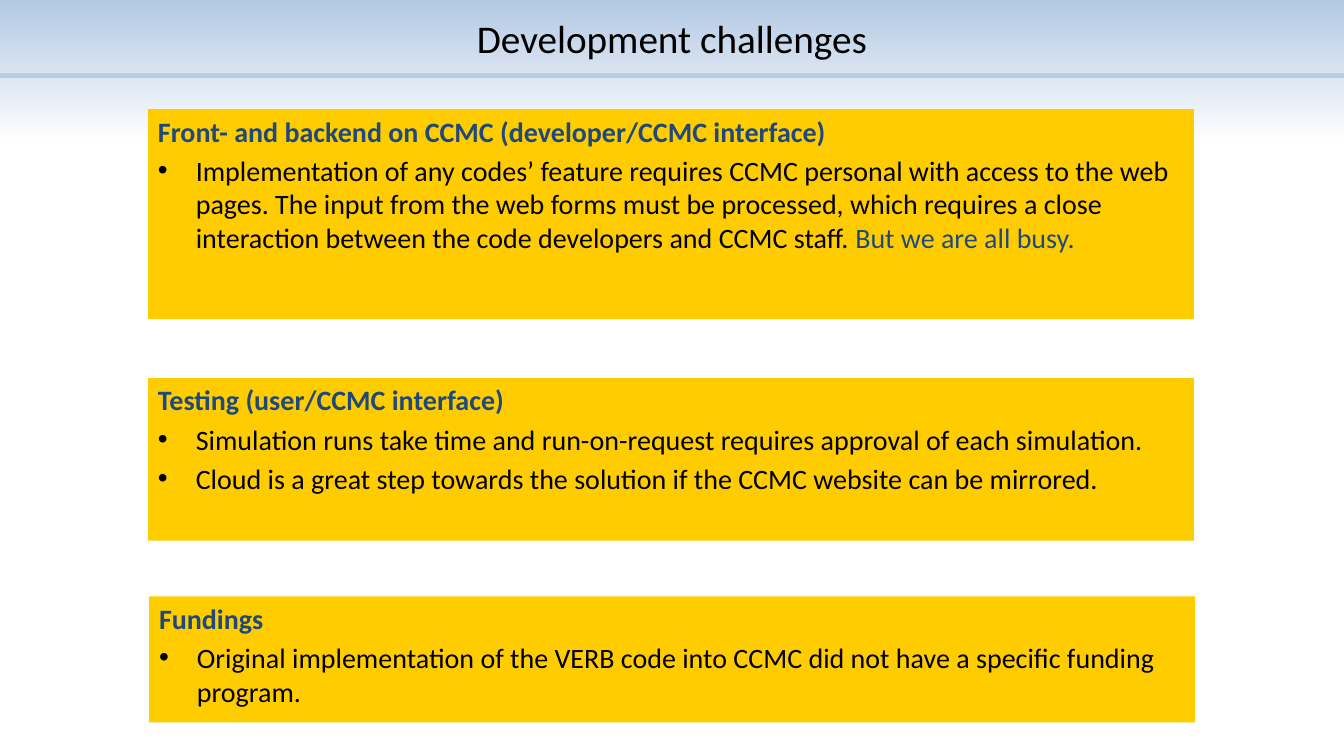
from lxml import etree
from pptx import Presentation
from pptx.dml.color import RGBColor
from pptx.enum.shapes import MSO_CONNECTOR, MSO_SHAPE
from pptx.enum.text import MSO_ANCHOR, PP_ALIGN
from pptx.oxml.ns import qn
from pptx.util import Pt

PX = 9525  # EMU per px, 96 px to the inch
STRAIGHT = MSO_CONNECTOR.STRAIGHT
RECTANGLE = MSO_SHAPE.RECTANGLE
MIDDLE, TOP = MSO_ANCHOR.MIDDLE, MSO_ANCHOR.TOP
CENTER, LEFT = PP_ALIGN.CENTER, PP_ALIGN.LEFT
COLORS = {"sky": "B3C9E3", "white": "FFFFFF", "rule": "B9CDE5",
          "panel": "FFCC00", "accent": "1F497D", "text": "000000"}
WIDTH, HEIGHT = 1280, 720
HEADER_HEIGHT = 72
PANEL_WIDTH = 996
BULLET_INDENT = 36


def color(name):
    return RGBColor.from_string(COLORS[name])


def style(paragraph, size, color_name, bold=False, align=LEFT):
    paragraph.alignment = align
    paragraph.font.name = "Calibri"
    paragraph.font.size = Pt(size)
    paragraph.font.bold = bold
    paragraph.font.color.rgb = color(color_name)


prs = Presentation()
prs.slide_width, prs.slide_height = WIDTH * PX, HEIGHT * PX
slide = prs.slides.add_slide(prs.slide_layouts[6])

# Background fading from sky to white
backdrop = slide.background.fill
backdrop.gradient()
backdrop.gradient_angle = 270
for stop, (name, position) in zip(backdrop.gradient_stops, [("sky", 0), ("white", 0.19)]):
    stop.color.rgb = color(name)
    stop.position = position

# Header rule and title
rule = slide.shapes.add_connector(STRAIGHT, 0, HEADER_HEIGHT * PX, WIDTH * PX, HEADER_HEIGHT * PX)
rule.line.color.rgb = color("rule")
rule.line.width = Pt(3)
etree.SubElement(rule.line._get_or_add_ln().getparent(), qn("a:effectLst"))

title = slide.shapes.add_textbox(64 * PX, 0, 1152 * PX, HEADER_HEIGHT * PX).text_frame
title.word_wrap = True
title.vertical_anchor = MIDDLE
title.text = "Development challenges"
style(title.paragraphs[0], 28, "text", align=CENTER)

# Challenges: left, top, height, heading, bullets as (text, accented ending)
challenges = [
    (141, 104, 200, "Front- and backend on CCMC (developer/CCMC interface)", [
        ("Implementation of any codes’ feature requires CCMC personal with access to the web "
         "pages. The input from the web forms must be processed, which requires a close "
         "interaction between the code developers and CCMC staff. ", "But we are all busy.")]),
    (141, 360, 155, "Testing (user/CCMC interface)", [
        ("Simulation runs take time and run-on-request requires approval of each simulation.", ""),
        ("Cloud is a great step towards the solution if the CCMC website can be mirrored.", "")]),
    (142, 568, 120, "Fundings", [
        ("Original implementation of the VERB code into CCMC did not have a specific funding "
         "program.", "")]),
]
for left, top, height, heading, bullets in challenges:
    panel = slide.shapes.add_shape(RECTANGLE, left * PX, top * PX, PANEL_WIDTH * PX, height * PX)
    panel.shadow.inherit = False
    panel.fill.solid()
    panel.fill.fore_color.rgb = color("panel")
    panel.line.fill.background()

    body = panel.text_frame
    body.word_wrap = True
    body.vertical_anchor = TOP
    body.text = heading
    style(body.paragraphs[0], 20, "accent", bold=True)
    body.paragraphs[0].space_before = Pt(4)

    for text, ending in bullets:
        item = body.add_paragraph()
        style(item, 20, "text")
        item.space_before = Pt(4)
        item.add_run().text = text
        if ending:
            remark = item.add_run()
            remark.text = ending
            remark.font.color.rgb = color("accent")
        # Bullet with hanging indent
        props = item._p.get_or_add_pPr()
        props.set("marL", str(BULLET_INDENT * PX))
        props.set("indent", str(-BULLET_INDENT * PX))
        marks = [etree.Element(qn("a:buFont"), typeface="Arial"),
                 etree.Element(qn("a:buChar"), char="•")]
        props.find(qn("a:defRPr")).addprevious(marks[0])
        marks[0].addnext(marks[1])

prs.save("out.pptx")
